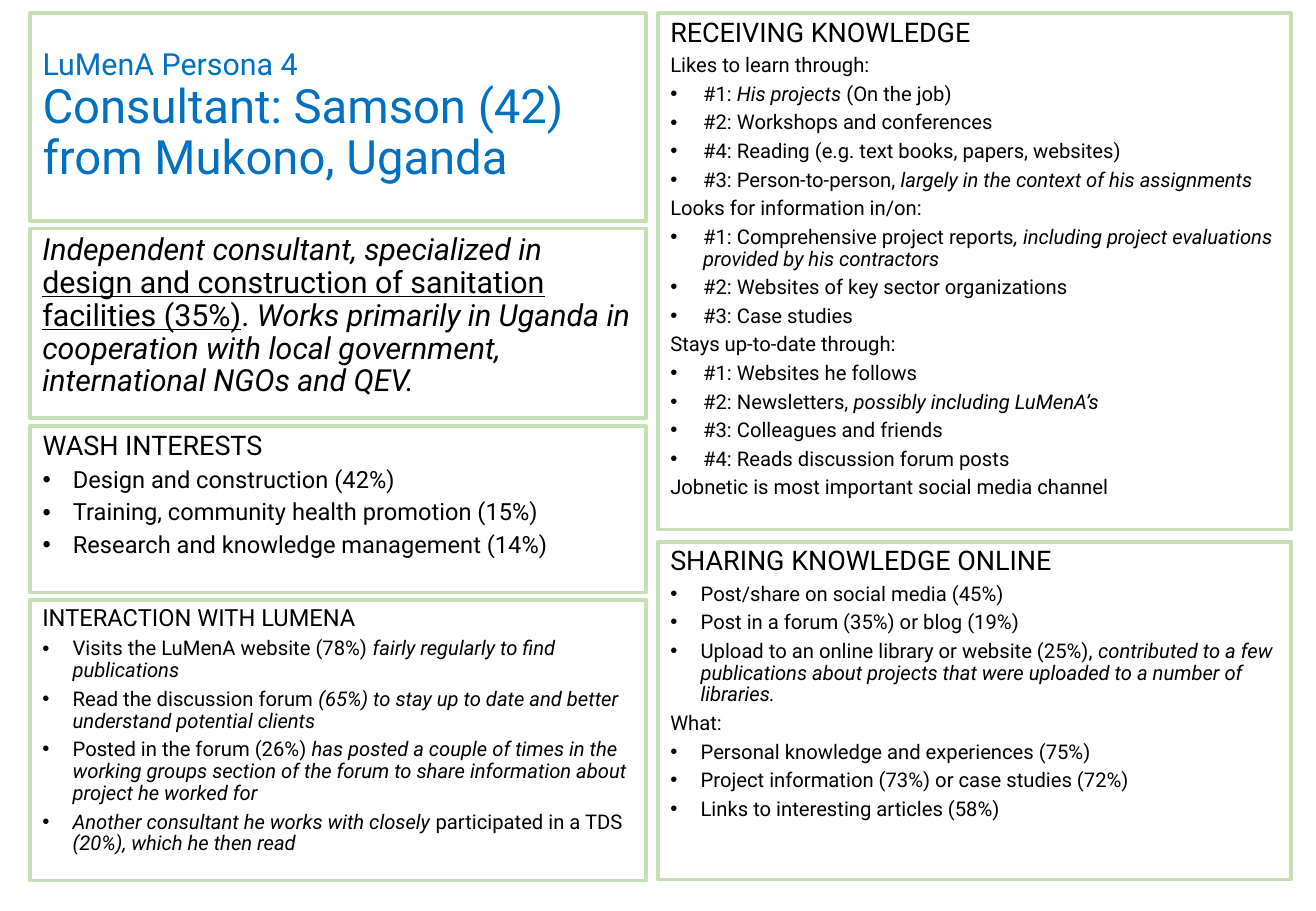
"""Build a one-page persona profile of six framed panels."""
from lxml import etree
from pptx import Presentation
from pptx import util as u
from pptx.dml import color
from pptx.enum import shapes, text
from pptx.oxml import ns

COLOURS = {"frame": "C5E0B4", "panel": "FFFFFF", "title": "0070C0", "body": "000000"}

LEFT, RIGHT = (18, 365), (390.2, 375.1)

INTERESTS = [
    "WASH INTERESTS",
    "•Design and construction (42%)",
    "•Training, community health promotion (15%)",
    "•Research and knowledge management (14%)",
]
SUMMARY = [
    "*Independent consultant, specialized in *_design and construction of sanitation "
    "facilities (35%)_. *Works primarily in Uganda in cooperation with local government, "
    "international NGOs and QEV.*",
]
RECEIVING = [
    "RECEIVING KNOWLEDGE",
    "Likes to learn through:",
    "•#1: *His projects *(On the job)",
    "•#2: Workshops and conferences",
    "•#4: Reading (e.g. text books, papers, websites)",
    "•#3: Person-to-person, *largely in the context of his assignments*",
    "Looks for information in/on:",
    "•#1: Comprehensive project reports*, including project evaluations provided by "
    "his contractors*",
    "•#2: Websites of key sector organizations",
    "•#3: Case studies",
    "Stays up-to-date through:",
    "•#1: Websites he follows",
    "•#2: Newsletters, *possibly including LuMenA’s*",
    "•#3: Colleagues and friends",
    "•#4: Reads discussion forum posts",
    "Jobnetic is most important social media channel",
]
SHARING = [
    "SHARING KNOWLEDGE ONLINE",
    "•Post/share on social media (45%)",
    "•Post in a forum (35%) or blog (19%)",
    "•Upload to an online library or website (25%), *contributed to a few publications "
    "about projects that were uploaded to a number of libraries.*",
    "What:",
    "•Personal knowledge and experiences (75%)",
    "•Project information (73%) or case studies (72%)",
    "•Links to interesting articles (58%)",
]
INTERACTION = [
    "INTERACTION WITH LUMENA",
    "•Visits the LuMenA website (78%) *fairly regularly to find publications*",
    "•Read the discussion forum *(65%) to stay up to date and better understand "
    "potential clients*",
    "•Posted in the forum (26%)* has posted a couple of times in the working groups "
    "section of the forum to share information about project he worked for*",
    "•*Another consultant he works with closely *participated in a TDS* (20%), "
    "which he then read*",
]


def apply(target, values):
    """Set every attribute named in the dict of values."""
    for name, value in values.items():
        setattr(target, name, value)


class PersonaPage:
    """Hold the style and the current slide."""

    font = "Roboto"

    def __init__(self, deck):
        """Add a title-and-content slide to the deck."""
        self.page = deck.slides.add_slide(deck.slide_layouts[1])

    def frame(self, box, column, top, height, anchor):
        """Place and outline a box, and return its text frame."""
        left, width = column
        apply(box, {"left": u.Pt(left), "top": u.Pt(top),
                    "width": u.Pt(width), "height": u.Pt(height)})
        box.shadow.inherit = False
        box.fill.solid()
        box.fill.fore_color.rgb = color.RGBColor.from_string(COLOURS["panel"])
        panel = box.fill._xPr.find(ns.qn("a:solidFill"))[0]
        etree.SubElement(panel, ns.qn("a:alpha"), val="60000")
        box.line.color.rgb = color.RGBColor.from_string(COLOURS["frame"])
        box.line.width = u.Pt(2.25)
        apply(box.text_frame, {"word_wrap": True, "vertical_anchor": anchor,
                               "auto_size": text.MSO_AUTO_SIZE.NONE})
        return box.text_frame

    def span(self, para, words, size, colour, **style):
        """Add one formatted run."""
        run = para.add_run()
        run.text = words
        apply(run.font, {"name": self.font, "size": u.Pt(size), **style})
        run.font.color.rgb = color.RGBColor.from_string(COLOURS[colour])

    def title(self, column, top, height, small, large):
        """Fill the title with a small line above a large one."""
        frame = self.frame(self.page.shapes.title, column, top, height,
                           text.MSO_ANCHOR.MIDDLE)
        para = frame.paragraphs[0]
        apply(para, {"alignment": text.PP_ALIGN.LEFT, "line_spacing": 0.9})
        self.span(para, small, 18, "title")
        para.add_line_break()
        self.span(para, large, 28, "title")

    def line(self, para, words, size, indent):
        """Write one line, with • for a bullet, * for italic and _ for underline."""
        apply(para, {"alignment": text.PP_ALIGN.LEFT, "line_spacing": 0.9,
                     "space_before": u.Pt(4)})
        bulleted = words.startswith("•")
        margin = u.Pt(indent if bulleted else 0)
        properties = para._p.get_or_add_pPr()
        properties.set("marL", str(margin))
        properties.set("indent", str(-margin))
        if bulleted:
            etree.SubElement(properties, ns.qn("a:buFont"), typeface="Arial")
            etree.SubElement(properties, ns.qn("a:buChar"), char="•")
        else:
            etree.SubElement(properties, ns.qn("a:buNone"))
        for i, piece in enumerate(words.lstrip("•").split("*")):
            for j, part in enumerate(piece.split("_")):
                if part:
                    self.span(para, part, size, "body",
                              italic=i % 2 == 1, underline=j % 2 == 1)

    def panel(self, column, top, height, lines, head, size, indent=18, box=None):
        """Fill a panel with a heading line and smaller lines below."""
        box = box or self.page.shapes.add_shape(shapes.MSO_SHAPE.RECTANGLE, 0, 0, 0, 0)
        frame = self.frame(box, column, top, height, text.MSO_ANCHOR.TOP)
        for number, words in enumerate(lines):
            para = frame.add_paragraph() if number else frame.paragraphs[0]
            self.line(para, words, size if number else head, indent)


def main():
    """Build and save the deck."""
    deck = Presentation()
    apply(deck, {"slide_width": u.Pt(780), "slide_height": u.Pt(540)})
    persona = PersonaPage(deck)
    persona.title(LEFT, 7.9, 123.1, "LuMenA Persona 4",
                  "Consultant: Samson (42) from Mukono, Uganda")
    persona.panel(LEFT, 252.7, 98.6, INTERESTS, 16, 14,
                  box=persona.page.placeholders[1])
    persona.panel(LEFT, 135.4, 112.3, SUMMARY, 18, 18)
    persona.panel(RIGHT, 7.9, 306, RECEIVING, 16, 12, indent=19.5)
    persona.panel(RIGHT, 321.1, 200.2, SHARING, 16, 12)
    persona.panel(LEFT, 355.7, 166.3, INTERACTION, 14, 12)
    deck.save("out.pptx")


if __name__ == "__main__":
    main()
